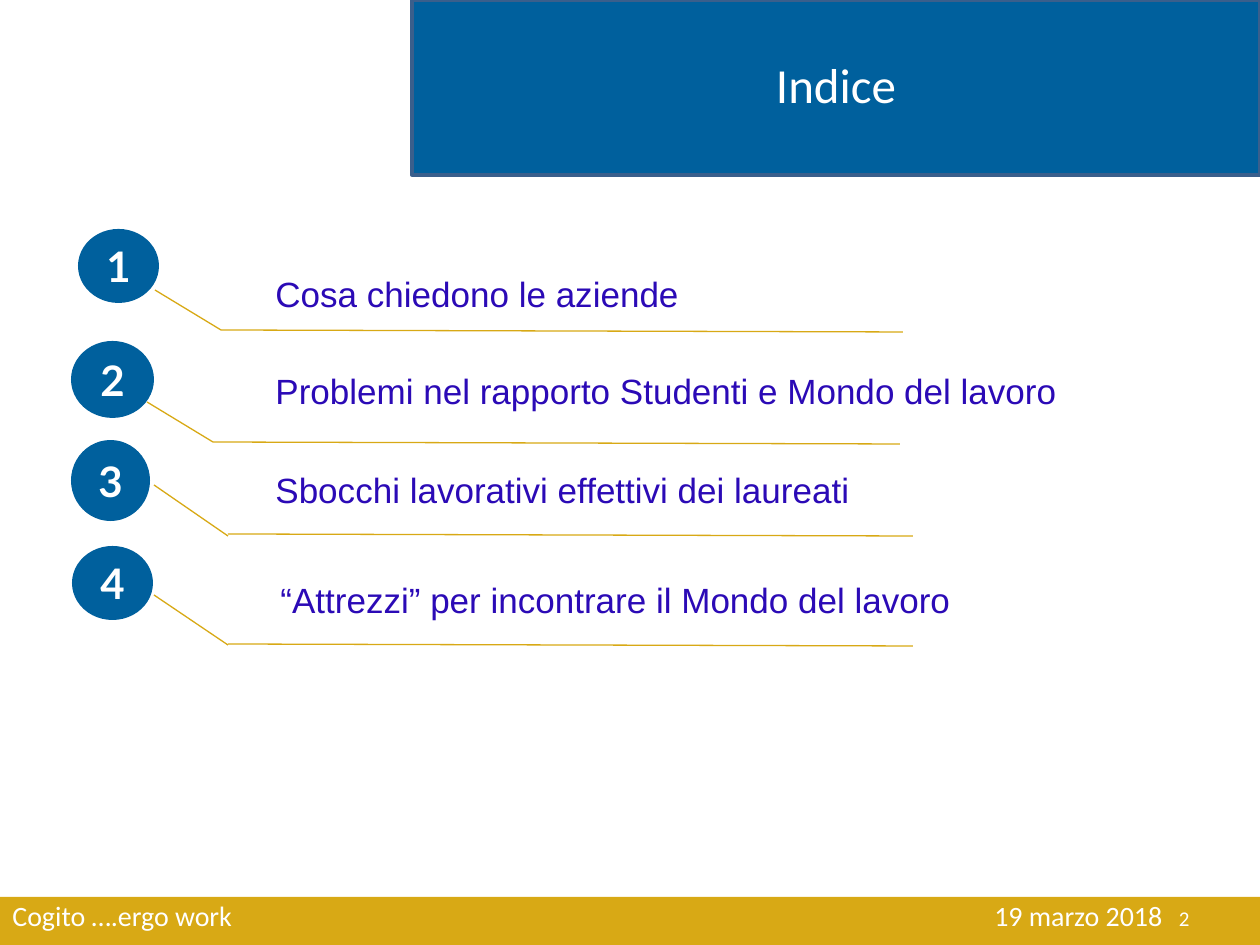
import dataclasses

import pptx
import pptx.dml.color
import pptx.enum.shapes
import pptx.enum.text
import pptx.oxml.xmlchemy
import pptx.util

PX = 914400 / 126
SHAPE = pptx.enum.shapes.MSO_SHAPE
ALIGN = pptx.enum.text.PP_ALIGN
ANCHOR = pptx.enum.text.MSO_ANCHOR


@dataclasses.dataclass(frozen=True)
class Theme:
    blue: str = "00609D"
    blue_edge: str = "3A5F8C"
    gold: str = "D8A915"
    violet: str = "2B0AB6"
    white: str = "FFFFFF"
    sans: str = "Calibri"
    badge_font: str = "Lato"
    label_font: str = "Arial"
    title_size: int = 28
    badge_size: int = 24
    label_size: int = 20
    footer_size: int = 16
    number_size: int = 12


@dataclasses.dataclass(frozen=True)
class Entry:
    text: str
    badge: tuple   # left, top, width, height within the index
    label: tuple   # left, top, width within the index
    leader: tuple  # start of the slanted line within the index
    slant: tuple   # run and drop of the slanted line
    rule: tuple    # top and length of the underline


THEME = Theme()
ENTRIES = [
    Entry("Cosa chiedono le aziende",
          (7, 0, 81, 74), (192, 37, 596), (84, 61), (66, 40), (101, 682)),
    Entry("Problemi nel rapporto Studenti e Mondo del lavoro",
          (0, 112, 83, 77), (192, 134, 873), (76, 173), (66, 40), (213, 687)),
    Entry("Sbocchi lavorativi effettivi dei laureati",
          (0, 211, 79, 81), (192, 233, 714), (83, 256), (74, 51), (305, 685)),
    Entry("“Attrezzi” per incontrare il Mondo del lavoro",
          (1, 317, 81, 74), (197, 343, 838), (83, 366), (74, 50), (415, 685)),
]


def emu(px):
    return pptx.util.Emu(round(px * PX))


def rgb(code):
    return pptx.dml.color.RGBColor.from_string(code)


def add_block(page, kind, box, fill, edge=None):
    block = page.shapes.add_shape(kind, *map(emu, box))
    block.shadow.inherit = False
    block.fill.solid()
    block.fill.fore_color.rgb = rgb(fill)
    if edge:
        block.line.color.rgb = rgb(edge)
        block.line.width = pptx.util.Pt(2)
    else:
        block.line.fill.background()
    return block


def write(shape, text, size, color, font, align=ALIGN.LEFT,
          anchor=ANCHOR.TOP, bold=False):
    frame = shape.text_frame
    frame.word_wrap = True
    frame.vertical_anchor = anchor
    para = frame.paragraphs[0]
    para.alignment = align
    span = para.add_run()
    span.text = text
    span.font.size = pptx.util.Pt(size)
    span.font.name = font
    span.font.bold = bold
    span.font.color.rgb = rgb(color)
    return para


def add_text(page, box, *style, **options):
    return write(page.shapes.add_textbox(*map(emu, box)), *style, **options)


def add_line(page, start, end):
    line = page.shapes.add_connector(
        pptx.enum.shapes.MSO_CONNECTOR.STRAIGHT, *map(emu, start + end))
    line.line.color.rgb = rgb(THEME.gold)
    line.line.width = pptx.util.Pt(0.75)
    properties = line._element.spPr
    properties.append(pptx.oxml.xmlchemy.OxmlElement("a:effectLst"))


def add_header(page, left, top, width, height):
    add_block(page, SHAPE.RECTANGLE, (left, top, width, height),
              THEME.blue, THEME.blue_edge)
    add_text(page, (left, top + 48, width, 55), "Indice", THEME.title_size,
             THEME.white, THEME.sans, align=ALIGN.CENTER)


def add_index(page, left, top):
    for number, entry in enumerate(ENTRIES, 1):
        # Numbered badge
        x, y, width, height = entry.badge
        badge = add_block(page, SHAPE.OVAL,
                          (left + x, top + y, width, height), THEME.blue)
        write(badge, str(number), THEME.badge_size, THEME.white,
              THEME.badge_font, align=ALIGN.CENTER, anchor=ANCHOR.MIDDLE,
              bold=True)
        # Slanted leader and underline
        x, y = left + entry.leader[0], top + entry.leader[1]
        bend = x + entry.slant[0]
        add_line(page, (x, y), (bend, y + entry.slant[1]))
        rule_top, length = top + entry.rule[0], entry.rule[1]
        add_line(page, (bend, rule_top), (bend + length, rule_top + 2))
        # Label
        x, y, width = entry.label
        add_text(page, (left + x, top + y, width, 55), entry.text,
                 THEME.label_size, THEME.violet, THEME.label_font)


def add_footer(page, left, top, width, height):
    add_block(page, SHAPE.RECTANGLE, (left, top, width, height), THEME.gold)
    # Event name, with the date on a right-aligned tab
    para = add_text(page, (left, top - 5, 1181, 55),
                    "Cogito ….ergo work\t19 marzo 2018",
                    THEME.footer_size, THEME.white, THEME.sans)
    tabs = pptx.oxml.xmlchemy.OxmlElement("a:tabLst")
    stop = pptx.oxml.xmlchemy.OxmlElement("a:tab")
    stop.set("pos", str(int(emu(1150))))
    stop.set("algn", "r")
    tabs.append(stop)
    para._p.get_or_add_pPr().append(tabs)
    # Page number
    add_text(page, (left + 908, top - 4, 294, 50), "2", THEME.number_size,
             THEME.white, THEME.sans, align=ALIGN.RIGHT, anchor=ANCHOR.MIDDLE)


def main():
    deck = pptx.Presentation()
    deck.slide_width, deck.slide_height = emu(1260), emu(945)
    page = deck.slides.add_slide(deck.slide_layouts[6])
    add_header(page, 412, 0, 848, 175)
    add_index(page, 71, 229)
    add_footer(page, 0, 897, 1260, 48)
    deck.save("out.pptx")


if __name__ == "__main__":
    main()
